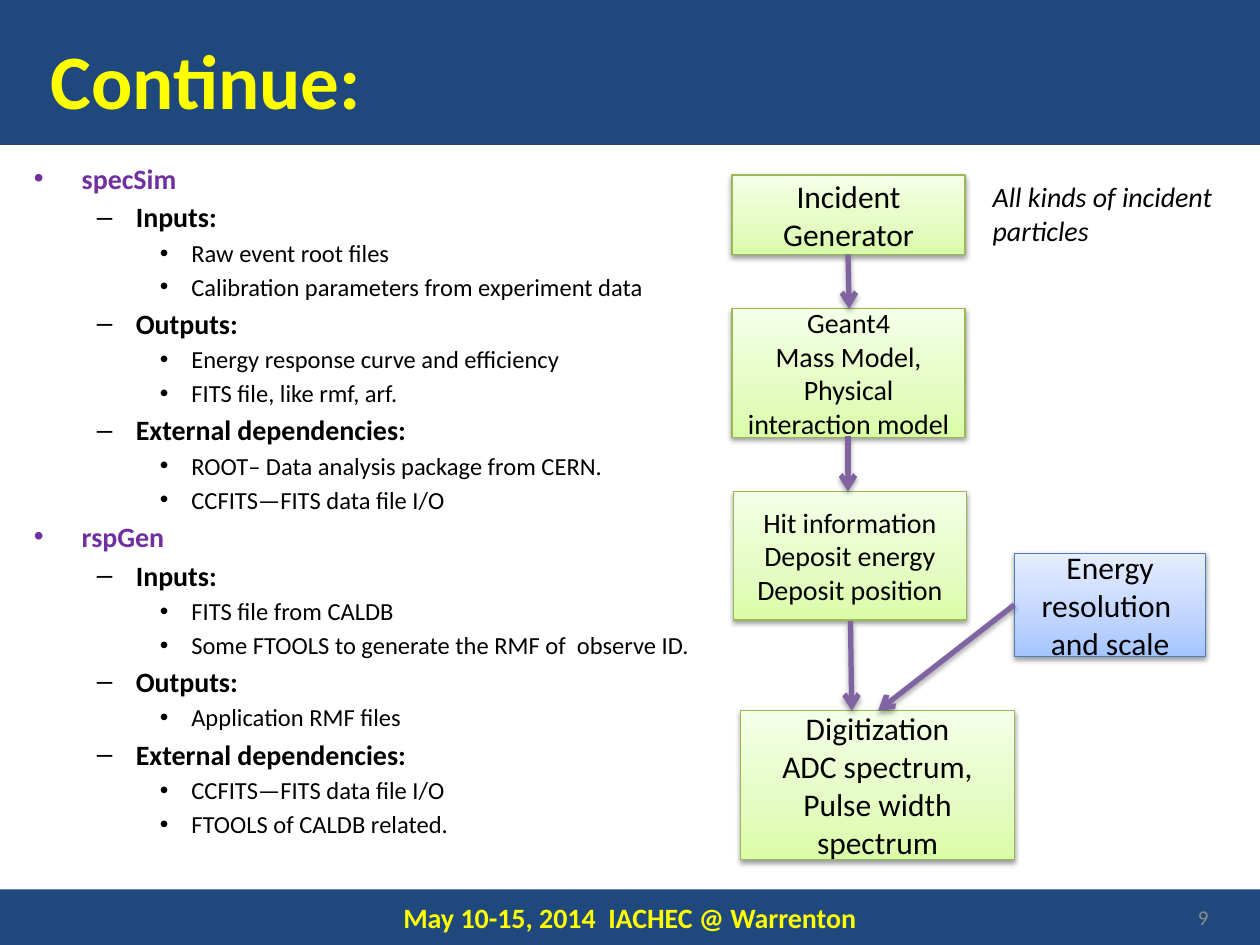
import copy

import pptx
import pptx.dml.color
import pptx.enum.shapes
import pptx.enum.text
import pptx.oxml
import pptx.oxml.ns
import pptx.util
from pptx.util import Inches

ALIGN = pptx.enum.text.PP_ALIGN
ANCHOR = pptx.enum.text.MSO_ANCHOR
NAVY, YELLOW, PURPLE, BLACK, GREY = "1F497D", "FFFF00", "7030A0", "000000", "8C8C8C"
ARROW_COLOR = "8064A2"
GREEN = (("DAFDA7", "E4FCC2", "F5FFE7"), "98B955")
BLUE = (("A4C4FF", "BFD4FF", "E6EEFF"), "4B7EBC")
GRADIENT_POSITIONS = (0, 0.35, 1)

# Per level: bullet, left margin, hanging indent, size, bold, colour, space before
LEVELS = (
    ("•", 0.38, 0.38, 16, True, PURPLE, 3),
    ("–", 0.81, 0.31, 16, True, BLACK, 3),
    ("•", 1.25, 0.25, 14, False, BLACK, 2.5),
)

TOOLS = {
    "specSim": {
        "Inputs:": ["Raw event root files", "Calibration parameters from experiment data"],
        "Outputs:": ["Energy response curve and efficiency", "FITS file, like rmf, arf."],
        "External dependencies:": ["ROOT– Data analysis package from CERN.",
                                   "CCFITS—FITS data file I/O"],
    },
    "rspGen": {
        "Inputs:": ["FITS file from CALDB", "Some FTOOLS to generate the RMF of  observe ID."],
        "Outputs:": ["Application RMF files"],
        "External dependencies:": ["CCFITS—FITS data file I/O", "FTOOLS of CALDB related."],
    },
}

STAGES = (
    ((5.81, 1.39, 1.85, 0.63), ["Incident Generator"], 18, GREEN),
    ((5.81, 2.45, 1.85, 1.02), ["Geant4", "Mass Model,", "Physical interaction model"], 16, GREEN),
    ((5.82, 3.9, 1.85, 1.02), ["Hit information", "Deposit energy", "Deposit position"], 16, GREEN),
    ((5.88, 5.64, 2.17, 1.18), ["Digitization", "ADC spectrum,", "Pulse width spectrum"], 18, GREEN),
    ((8.05, 4.39, 1.52, 0.82), ["Energy resolution  and scale"], 18, BLUE),
)

ARROWS = (
    ((6.73, 2.02), (6.74, 2.45)),
    ((8.05, 4.8), (6.97, 5.64)),
    ((6.75, 4.93), (6.76, 5.64)),
    ((6.73, 3.46), (6.73, 3.9)),
)


def rgb(value):
    return pptx.dml.color.RGBColor.from_string(value)


def add_element(parent, tag, **attributes):
    element = pptx.oxml.parse_xml(f"<a:{tag} {pptx.oxml.ns.nsdecls('a')}/>")
    for name, value in attributes.items():
        element.set(name, str(value))
    parent.append(element)
    return element


def add_shadow(effects, offset, opacity):
    """Cast a soft black shadow straight down; offset in points, opacity in percent."""
    shadow = add_element(effects, "outerShdw", blurRad=pptx.util.Pt(3.1),
                         dist=pptx.util.Pt(offset), dir=5400000, rotWithShape=0)
    black = add_element(shadow, "srgbClr", val=BLACK)
    add_element(black, "alpha", val=opacity * 1000)


class SlideBuilder:
    font = "Calibri"

    def __init__(self, deck):
        self.slide = deck.slides.add_slide(deck.slide_layouts[5])
        self.shapes = self.slide.shapes

    def style(self, paragraph, size, color, bold=False, italic=False, align=ALIGN.LEFT):
        paragraph.alignment = align
        font = paragraph.font
        font.name, font.size = self.font, pptx.util.Pt(size)
        font.bold, font.italic = bold, italic
        font.color.rgb = rgb(color)

    def set_text(self, shape, lines, size, color, anchor=ANCHOR.MIDDLE, **style):
        frame = shape.text_frame
        frame.word_wrap = True
        frame.vertical_anchor = anchor
        frame.text = "\n".join(lines)
        for paragraph in frame.paragraphs:
            self.style(paragraph, size, color, **style)

    def title(self, text, box):
        title = self.shapes.title
        title.left, title.top, title.width, title.height = map(Inches, box)
        self.set_text(title, [text], 44, YELLOW, ANCHOR.TOP, bold=True)
        self.shapes._spTree.append(title._element)  # in front of the band

    def rectangle(self, box):
        shape = self.shapes.add_shape(pptx.enum.shapes.MSO_SHAPE.RECTANGLE, *map(Inches, box))
        shape.shadow.inherit = False
        return shape

    def band(self, box):
        band = self.rectangle(box)
        band.fill.solid()
        band.fill.fore_color.rgb = rgb(NAVY)
        band.line.fill.background()
        return band

    def stage(self, box, lines, size, palette):
        stage = self.rectangle(box)
        stop_colors, outline = palette
        stage.fill.gradient()
        stage.fill.gradient_angle = 90
        properties = stage._element.spPr
        stops = properties.find(".//" + pptx.oxml.ns.qn("a:gsLst"))
        stops.append(copy.deepcopy(stops[0]))
        for stop, position, color in zip(stage.fill.gradient_stops, GRADIENT_POSITIONS, stop_colors):
            stop.position = position
            stop.color.rgb = rgb(color)
        stage.line.color.rgb = rgb(outline)
        stage.line.width = pptx.util.Pt(0.75)
        add_shadow(properties.find(pptx.oxml.ns.qn("a:effectLst")), 1.6, 38)
        self.set_text(stage, lines, size, BLACK, align=ALIGN.CENTER)

    def arrow(self, start, end):
        arrow = self.shapes.add_connector(pptx.enum.shapes.MSO_CONNECTOR.STRAIGHT,
                                          *map(Inches, start + end))
        arrow.line.color.rgb = rgb(ARROW_COLOR)
        arrow.line.width = pptx.util.Pt(3)
        add_element(arrow.line._get_or_add_ln(), "tailEnd", type="arrow")
        add_shadow(add_element(arrow._element.spPr, "effectLst"), 1.8, 35)

    def text(self, box, lines, size, color, **style):
        self.set_text(self.shapes.add_textbox(*map(Inches, box)), lines, size, color, **style)

    def outline(self, box, items):
        """Add a bulleted list from (level, text) pairs."""
        frame = self.shapes.add_textbox(*map(Inches, box)).text_frame
        frame.word_wrap = True
        for index, (level, text) in enumerate(items):
            bullet, margin, hanging, size, bold, color, gap = LEVELS[level]
            paragraph = frame.add_paragraph() if index else frame.paragraphs[0]
            paragraph.text = text
            paragraph.level = level
            if index:
                paragraph.space_before = pptx.util.Pt(gap)
            properties = paragraph._p.get_or_add_pPr()
            properties.set("marL", str(Inches(margin)))
            properties.set("indent", str(-Inches(hanging)))
            add_element(properties, "buFont", typeface="Arial")
            add_element(properties, "buChar", char=bullet)
            self.style(paragraph, size, color, bold)


def outline_items():
    for tool, sections in TOOLS.items():
        yield 0, tool
        for section, entries in sections.items():
            yield 1, section
            for entry in entries:
                yield 2, entry


def main():
    deck = pptx.Presentation()
    deck.slide_width, deck.slide_height = Inches(10), Inches(7.5)
    page = SlideBuilder(deck)

    page.band((0, 0, 10, 1.15))
    footer = page.band((0, 7.06, 10, 0.44))
    page.set_text(footer, ["May 10-15, 2014  IACHEC @ Warrenton"], 16, YELLOW,
                  bold=True, align=ALIGN.CENTER)
    page.text((7.36, 7.08, 2.33, 0.4), ["9"], 12, GREY, align=ALIGN.RIGHT)
    page.outline((0.17, 1.23, 9.01, 5.75), outline_items())
    page.title("Continue:", (0.3, 0.21, 9.6, 0.84))

    for stage in STAGES:
        page.stage(*stage)
    for start, end in ARROWS:
        page.arrow(start, end)
    page.text((7.78, 1.38, 2.11, 0.64), ["All kinds of incident particles"], 16, BLACK,
              anchor=ANCHOR.TOP, italic=True)

    deck.save("out.pptx")


if __name__ == "__main__":
    main()
